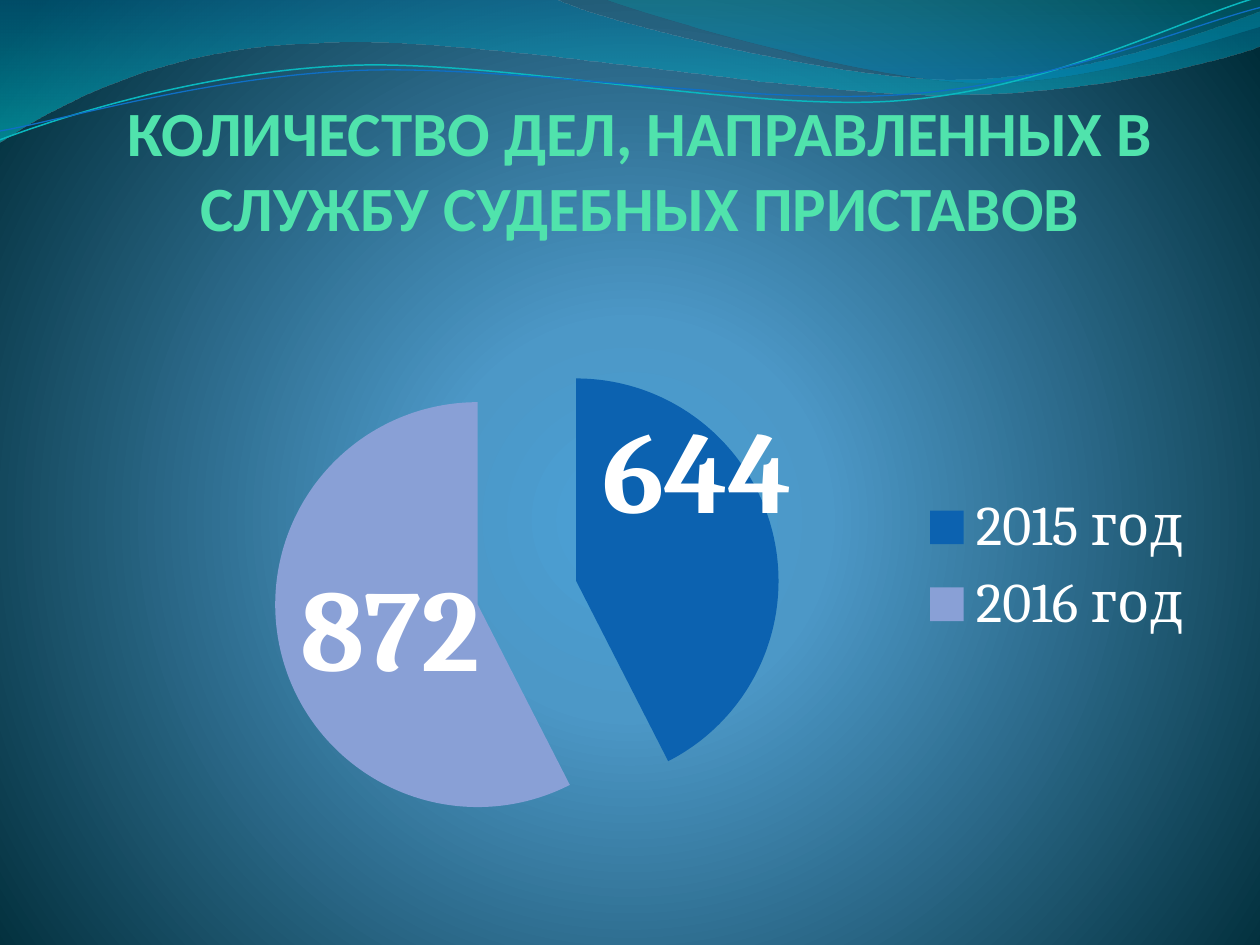
from lxml import etree
from pptx import Presentation, util as u
from pptx.chart.data import CategoryChartData
from pptx.dml.color import RGBColor
from pptx.enum import chart as ch, text
from pptx.oxml import parse_xml
from pptx.oxml.ns import nsdecls, qn

WHITE = RGBColor(0xFF, 0xFF, 0xFF)
MINT = RGBColor(0x50, 0xE3, 0xAC)
TEAL = RGBColor(0x0A, 0xB8, 0xBF)
BLUE = RGBColor(0x0F, 0x6F, 0xC6)
YEAR_2015 = RGBColor(0x0C, 0x62, 0xB0)
YEAR_2016 = RGBColor(0x89, 0xA0, 0xD6)
GLOW, SKY, NIGHT = (RGBColor.from_string(c) for c in ("4AA0D6", "4C98C7", "002C38"))
DEEP, AQUA = RGBColor(0x00, 0x74, 0xA1), RGBColor(0x00, 0xC6, 0xCF)
SEA, LAGOON = RGBColor(0x00, 0xA1, 0xA9), RGBColor(0x00, 0x8B, 0xBF)

DOWN = '<a:lin ang="5400000" scaled="1"/>'
RADIAL = ('<a:path path="circle"><a:fillToRect l="10000" t="110000" '
          'r="10000" b="100000"/></a:path>')


def apply(target, values):
    for key, value in values.items():
        setattr(target, key, value)


class Deck:
    COLUMNS, ROWS = 10, 7.5
    HEADING = {"name": "Calibri", "size": u.Pt(36), "bold": True}
    CHART = {"name": "Cambria", "size": u.Pt(18)}
    LEGEND = {"name": "Cambria", "size": u.Pt(32)}
    VALUE = {"name": "Cambria", "size": u.Pt(66), "bold": True}

    def __init__(self):
        self.prs = Presentation()
        apply(self.prs, {"slide_width": u.Inches(10), "slide_height": u.Inches(7.5)})
        self.slide = self.prs.slides.add_slide(self.prs.slide_layouts[5])

    def place(self, column, row):
        return (round(column * self.prs.slide_width / self.COLUMNS),
                round(row * self.prs.slide_height / self.ROWS))

    def font(self, font, values, color=WHITE):
        apply(font, values)
        font.color.rgb = color

    def gradient(self, fill, element, stops, direction):
        fill.gradient()
        marks = "".join(
            f'<a:gs pos="{pos * 1000}"><a:srgbClr val="{color}">'
            f'<a:alpha val="{alpha * 1000}"/></a:srgbClr></a:gs>'
            for pos, color, alpha in stops)
        old = element.find(".//" + qn("a:gradFill"))
        old.getparent().replace(old, parse_xml(
            f'<a:gradFill {nsdecls("a")} rotWithShape="1">'
            f'<a:gsLst>{marks}</a:gsLst>{direction}</a:gradFill>'))

    def background(self, stops):
        self.gradient(self.slide.background.fill, self.slide.element, stops, RADIAL)

    def freeform(self, start, segments, close):
        corners = [self.place(*point) for segment in segments for point in segment]
        builder = self.slide.shapes.build_freeform(*self.place(*start), scale=1.0)
        builder.add_line_segments(corners, close=close)
        shape = builder.convert_to_shape()
        shape.shadow.inherit = False
        lines = iter(list(shape.element.iter(qn("a:lnTo"))))
        for segment in segments:
            parts = [next(lines) for _ in segment]
            if len(parts) == 3:
                curve = etree.Element(qn("a:cubicBezTo"))
                parts[0].addprevious(curve)
                for part in parts:
                    curve.append(part[0])
                    part.getparent().remove(part)
        return shape

    def wave(self, start, segments, stops):
        shape = self.freeform(start, segments, True)
        shape.line.fill.background()
        self.gradient(shape.fill, shape.element, stops, DOWN)

    def strand(self, start, segments, color, width):
        shape = self.freeform(start, segments, False)
        shape.fill.background()
        shape.line.color.rgb = color
        shape.line.width = u.Pt(width)

    def title(self, wording, corner, size):
        heading = self.slide.shapes.title
        left, top = self.place(*corner)
        width, height = self.place(*size)
        apply(heading, {"left": left, "top": top, "width": width, "height": height})
        frame = heading.text_frame
        apply(frame, {"text": wording, "word_wrap": True,
                      "auto_size": text.MSO_AUTO_SIZE.NONE,
                      "vertical_anchor": text.MSO_ANCHOR.BOTTOM,
                      "margin_left": 0, "margin_right": 0,
                      "margin_top": 0, "margin_bottom": 0})
        frame.paragraphs[0].alignment = text.PP_ALIGN.CENTER
        for run in frame.paragraphs[0].runs:
            self.font(run.font, self.HEADING, MINT)

    def layout(self, **values):
        layout = parse_xml(f'<c:layout {nsdecls("c")}><c:manualLayout/></c:layout>')
        for key, value in values.items():
            etree.SubElement(layout[0], qn(f"c:{key}")).set("val", str(value))
        return layout

    def set_layout(self, parent, before, **values):
        for old in parent.findall(qn("c:layout")):
            parent.remove(old)
        parent.find(qn(before)).addprevious(
            self.layout(xMode="edge", yMode="edge", **values))

    def pie(self, slices, corner, size, plot_box, legend_corner, explosion):
        data = CategoryChartData()
        data.categories = [name for name, *_ in slices]
        data.add_series("Series 1", [value for _, value, *_ in slices])
        chart = self.slide.shapes.add_chart(
            ch.XL_CHART_TYPE.PIE, *self.place(*corner), *self.place(*size), data).chart
        self.font(chart.font, self.CHART)
        apply(chart, {"has_title": False, "has_legend": True})
        apply(chart.legend, {"position": ch.XL_LEGEND_POSITION.RIGHT,
                             "include_in_layout": False})
        self.font(chart.legend.font, self.LEGEND)
        plot = chart.plots[0]
        plot.vary_by_categories = True
        series = plot.series[0]
        for index, (_, _, color, _) in enumerate(slices):
            point = series.points[index]
            point.format.fill.solid()
            point.format.fill.fore_color.rgb = color
            point.format.line.fill.background()
            label = point.data_label
            self.font(label.font, self.VALUE)
            label.position = ch.XL_LABEL_POSITION.CENTER
        element = series._element
        element.find(qn("c:dPt")).addprevious(
            etree.Element(qn("c:explosion"), val=str(explosion)))
        for label, (*_, shift) in zip(element.iter(qn("c:dLbl")), slices):
            label.insert(1, self.layout(x=shift[0], y=shift[1]))
        x, y, w, h = plot_box
        area = chart._chartSpace.chart.plotArea
        self.set_layout(area, "c:pieChart", x=x, y=y, w=w, h=h)
        area.find(qn("c:layout"))[0].insert(
            0, etree.Element(qn("c:layoutTarget"), val="inner"))
        x, y = legend_corner
        self.set_layout(chart.legend._element, "c:overlay", x=x, y=y)


def main():
    deck = Deck()
    deck.background([(0, GLOW, 100), (25, SKY, 100), (100, NIGHT, 100)])
    deck.wave((0, 0), [[(4.4, -0.01)],
                       [(4.76, 0.17), (6.64, 0.63), (7.58, 0.63)],
                       [(8.53, 0.63), (9.58, 0.26), (10, 0.09)], [(10.01, 0.36)],
                       [(9.83, 0.44), (8.7, 0.76), (7.46, 0.75)],
                       [(6.22, 0.75), (3.82, 0.28), (2.57, 0.34)],
                       [(1.29, 0.36), (0.46, 0.83), (-0.01, 1.13)]],
              [(0, DEEP, 45), (100, AQUA, 55)])
    deck.wave((4.79, -0.01), [[(5.09, 0.11), (6.82, 0.62), (7.69, 0.65)],
                              [(8.56, 0.69), (9.61, 0.32), (10, 0.21)], [(10, 0)]],
              [(0, SEA, 30), (80, LAGOON, 45)])
    deck.strand((0, 1.11), [[(0.48, 0.93), (1.58, 0.57), (2.77, 0.52)],
                            [(3.95, 0.47), (5.93, 0.89), (7.13, 0.8)],
                            [(8.33, 0.71), (9.38, 0.15), (9.98, -0.02)]], TEAL, 0.85)
    deck.strand((0, 1.04), [[(0.47, 0.96), (1.64, 0.61), (2.83, 0.56)],
                            [(4.03, 0.51), (5.97, 0.84), (7.17, 0.75)],
                            [(8.36, 0.67), (9.41, 0.21), (10, 0.06)]], BLUE, 0.75)
    deck.pie([("2015 год", 644, YEAR_2015, (0.02, -0.13)),
              ("2016 год", 872, YEAR_2016, (0.01, 0.01))],
             (0.59, 2.25), (8.98, 4.96), (0.07, 0.09, 0.66, 0.81), (0.74, 0.32), 25)
    deck.title("КОЛИЧЕСТВО ДЕЛ, НАПРАВЛЕННЫХ В\vСЛУЖБУ СУДЕБНЫХ ПРИСТАВОВ",
               (0.83, 1.15), (8.5, 0.79))
    deck.prs.save("out.pptx")


if __name__ == "__main__":
    main()
